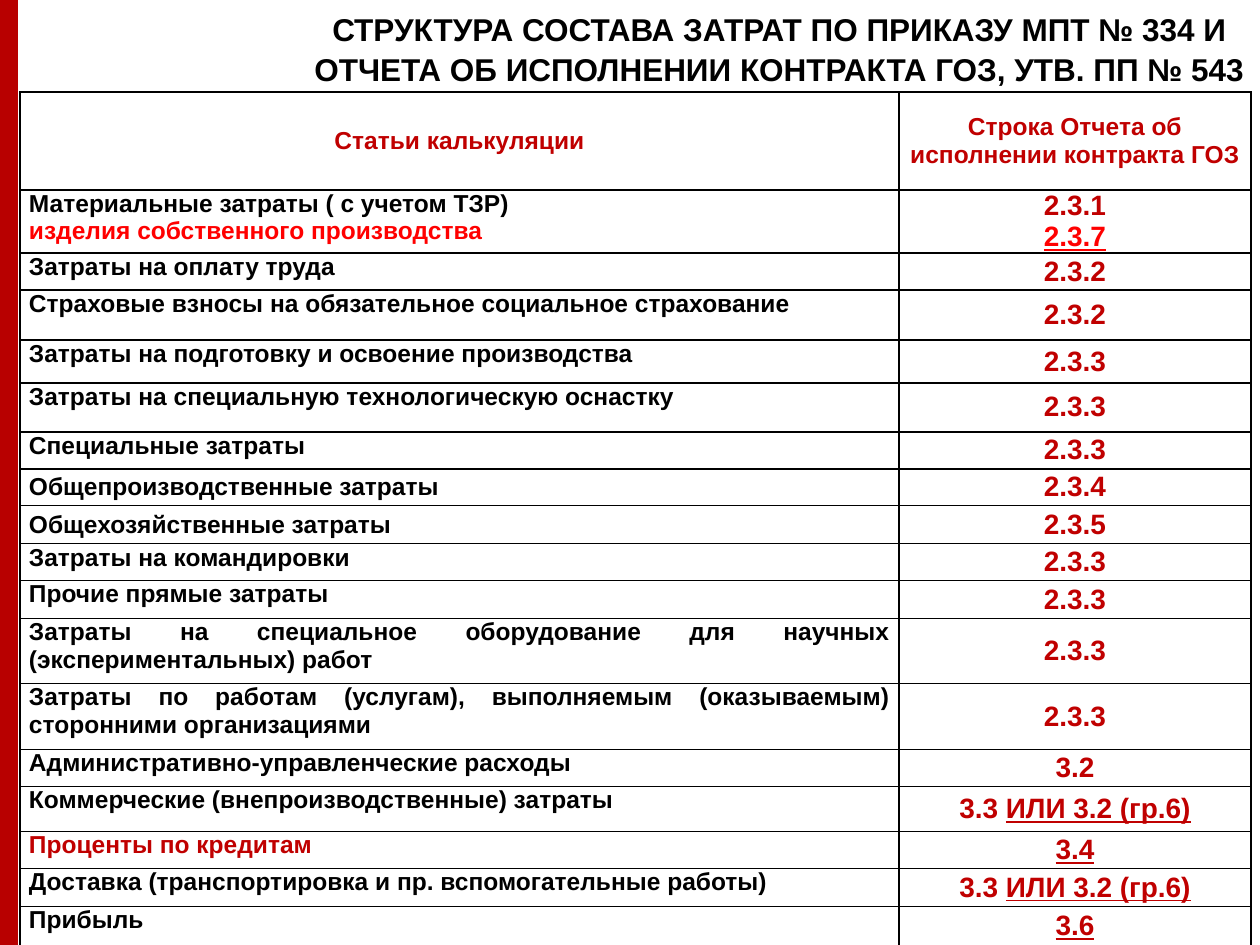
from dataclasses import dataclass

from lxml import etree
from pptx import Presentation
from pptx.dml.color import RGBColor
from pptx.enum.shapes import MSO_SHAPE
from pptx.enum.text import MSO_ANCHOR, PP_ALIGN
from pptx.oxml.ns import qn
from pptx.util import Emu, Pt

RECTANGLE = MSO_SHAPE.RECTANGLE
TOP, MIDDLE = MSO_ANCHOR.TOP, MSO_ANCHOR.MIDDLE
CENTER, JUSTIFY = PP_ALIGN.CENTER, PP_ALIGN.JUSTIFY
EMU_PER_PX = 914400 / 126


@dataclass(frozen=True)
class Theme:
    font: str = "Arial"
    black: str = "000000"
    white: str = "FFFFFF"
    bar: str = "B80000"
    accent: str = "C00000"
    red: str = "FF0000"
    title_size: int = 18
    item_size: int = 14
    code_size: int = 16
    border_width: int = 1
    title_spacing: float = 1.07


THEME = Theme()


@dataclass(frozen=True)
class Span:
    text: str
    color: str
    size: int
    underline: bool = False


Line = tuple[Span, ...]


@dataclass(frozen=True)
class CostRow:
    height: int
    item: tuple[Line, ...]
    code: tuple[Line, ...]
    item_anchor: MSO_ANCHOR = TOP
    item_align: PP_ALIGN = JUSTIFY


def item(text: str, color: str = THEME.black) -> Line:
    return (Span(text, color, THEME.item_size),)


def code(plain: str = "", underlined: str = "", color: str = THEME.accent) -> Line:
    spans = (
        Span(plain, color, THEME.code_size),
        Span(underlined, color, THEME.code_size, True),
    )
    return tuple(span for span in spans if span.text)


def cost(height: int, name: str, number: str, anchor: MSO_ANCHOR = TOP) -> CostRow:
    return CostRow(height, (item(name),), (code(number),), anchor)


TITLE = (
    "СТРУКТУРА СОСТАВА ЗАТРАТ ПО ПРИКАЗУ МПТ № 334 И "
    "ОТЧЕТА ОБ ИСПОЛНЕНИИ КОНТРАКТА ГОЗ, УТВ. ПП № 543"
)
SALES_CODE = code("3.3 ", "ИЛИ 3.2 (гр.6)")
COLUMN_WIDTHS = (879, 352)
ROWS = (
    CostRow(
        98,
        (item("Статьи калькуляции", THEME.accent),),
        (item("Строка Отчета об исполнении контракта ГОЗ", THEME.accent),),
        MIDDLE,
        CENTER,
    ),
    CostRow(
        63,
        (
            item("Материальные затраты ( с учетом ТЗР)"),
            item("изделия собственного производства", THEME.red),
        ),
        (code("2.3.1"), code(underlined="2.3.7", color=THEME.red)),
    ),
    cost(37, "Затраты на оплату труда", "2.3.2"),
    cost(50, "Страховые взносы на обязательное социальное страхование", "2.3.2"),
    cost(43, "Затраты на подготовку и освоение производства", "2.3.3"),
    cost(49, "Затраты на специальную технологическую оснастку", "2.3.3"),
    cost(37, "Специальные затраты", "2.3.3"),
    cost(37, "Общепроизводственные затраты", "2.3.4", MIDDLE),
    cost(38, "Общехозяйственные затраты", "2.3.5", MIDDLE),
    cost(37, "Затраты на командировки", "2.3.3"),
    cost(38, "Прочие прямые затраты", "2.3.3"),
    cost(
        65,
        "Затраты на специальное оборудование для научных (экспериментальных) работ",
        "2.3.3",
    ),
    cost(
        66,
        "Затраты по работам (услугам), выполняемым (оказываемым) "
        "сторонними организациями",
        "2.3.3",
    ),
    cost(37, "Административно-управленческие расходы", "3.2"),
    CostRow(45, (item("Коммерческие (внепроизводственные) затраты"),), (SALES_CODE,)),
    CostRow(
        37, (item("Проценты по кредитам", THEME.accent),), (code(underlined="3.4"),)
    ),
    CostRow(
        38,
        (item("Доставка (транспортировка и пр. вспомогательные работы)"),),
        (SALES_CODE,),
    ),
    CostRow(39, (item("Прибыль"),), (code(underlined="3.6"),)),
)


def px(length: int) -> Emu:
    return Emu(round(length * EMU_PER_PX))


def write_lines(frame, lines: tuple[Line, ...], align: PP_ALIGN) -> None:
    for index, line in enumerate(lines):
        para = frame.add_paragraph() if index else frame.paragraphs[0]
        para.alignment = align
        for span in line:
            run = para.add_run()
            run.text = span.text
            font = run.font
            font.name = THEME.font
            font.size = Pt(span.size)
            font.bold = True
            font.underline = span.underline
            font.color.rgb = RGBColor.from_string(span.color)


def add_borders(cell) -> None:
    """Outline all four sides; the lines must precede the cell fill."""
    properties = cell._tc.get_or_add_tcPr()
    for index, side in enumerate(("a:lnL", "a:lnR", "a:lnT", "a:lnB")):
        line = etree.Element(qn(side), w=str(Pt(THEME.border_width)))
        fill = etree.SubElement(line, qn("a:solidFill"))
        etree.SubElement(fill, qn("a:srgbClr"), val=THEME.black)
        properties.insert(index, line)


def fill_cell(cell, lines: tuple[Line, ...], anchor: MSO_ANCHOR, align: PP_ALIGN) -> None:
    cell.margin_left = cell.margin_right = px(9)
    cell.margin_top = cell.margin_bottom = 0
    cell.vertical_anchor = anchor
    cell.fill.solid()
    cell.fill.fore_color.rgb = RGBColor.from_string(THEME.white)
    add_borders(cell)
    write_lines(cell.text_frame, lines, align)


def add_side_bar(page) -> None:
    bar = page.shapes.add_shape(RECTANGLE, px(-1), 0, px(19), px(945))
    bar.shadow.inherit = False
    bar.fill.solid()
    bar.fill.fore_color.rgb = RGBColor.from_string(THEME.bar)
    bar.line.fill.background()


def add_cost_table(page) -> None:
    total_height = sum(row.height for row in ROWS)
    table = page.shapes.add_table(
        len(ROWS), len(COLUMN_WIDTHS), px(20), px(92),
        px(sum(COLUMN_WIDTHS)), px(total_height),
    ).table
    for column, width in zip(table.columns, COLUMN_WIDTHS):
        column.width = px(width)
    for index, row in enumerate(ROWS):
        table.rows[index].height = px(row.height)
        fill_cell(table.cell(index, 0), row.item, row.item_anchor, row.item_align)
        fill_cell(table.cell(index, 1), row.code, MIDDLE, CENTER)


def add_title(page) -> None:
    box = page.shapes.add_textbox(px(287), px(1), px(985), px(90))
    frame = box.text_frame
    frame.word_wrap = True
    write_lines(frame, ((Span(TITLE, THEME.black, THEME.title_size),),), CENTER)
    frame.paragraphs[0].line_spacing = THEME.title_spacing


def main() -> None:
    deck = Presentation()
    deck.slide_width, deck.slide_height = px(1260), px(945)
    page = deck.slides.add_slide(deck.slide_layouts[6])
    add_side_bar(page)
    add_cost_table(page)
    add_title(page)
    deck.save("out.pptx")


if __name__ == "__main__":
    main()
